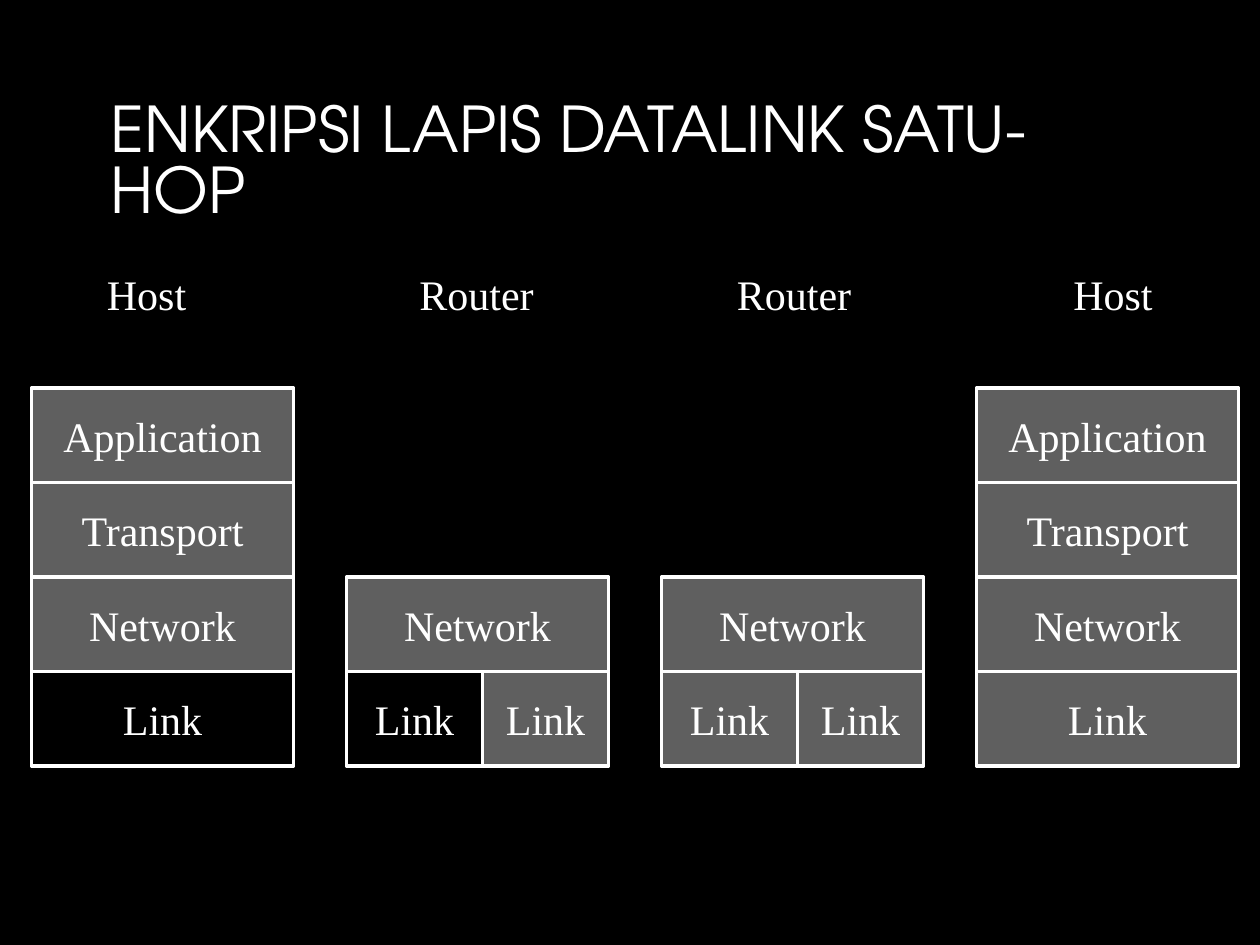
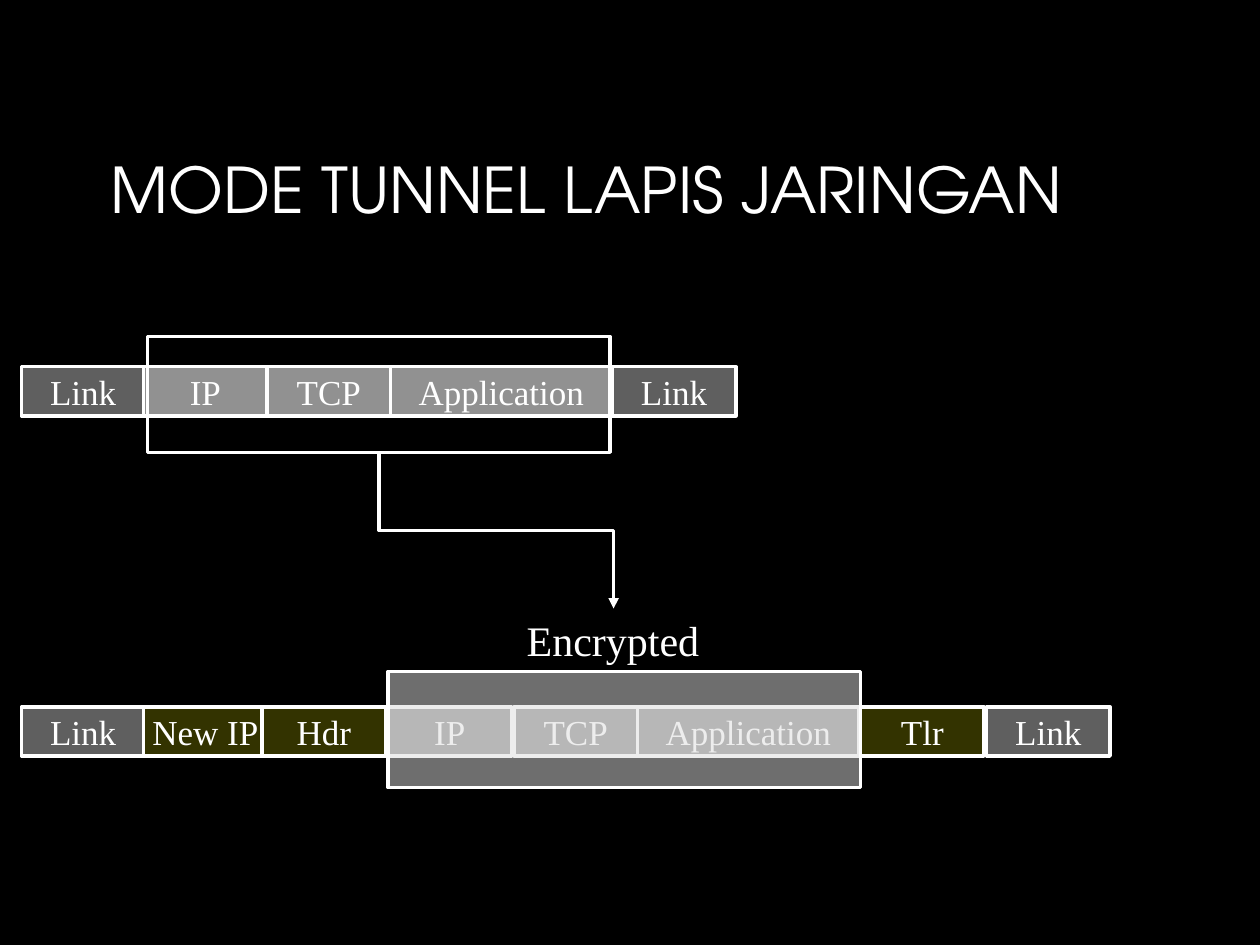
"""Build two slides on link-layer encryption and network-layer tunnel mode."""
from dataclasses import dataclass

from lxml.etree import SubElement
from pptx import Presentation
from pptx.dml.color import RGBColor
from pptx.enum.shapes import MSO_CONNECTOR, MSO_SHAPE
from pptx.enum.text import MSO_ANCHOR, MSO_AUTO_SIZE, PP_ALIGN
from pptx.oxml.ns import qn
from pptx.shapes.autoshape import Shape
from pptx.slide import Slide
from pptx.text.text import TextFrame
from pptx.util import Emu, Pt

EMU_PER_PX = 9144
BLACK = RGBColor(0x00, 0x00, 0x00)
WHITE = RGBColor(0xFF, 0xFF, 0xFF)
GREY = RGBColor(0x5F, 0x5F, 0x5F)
PAYLOAD_GREY = RGBColor(0x91, 0x91, 0x91)
VEIL_GREY = RGBColor(0xDD, 0xDD, 0xDD)
OLIVE = RGBColor(0x33, 0x33, 0x00)
TITLE_FONT = "TeX Gyre Adventor"
BODY_FONT = "Times New Roman"
OUTLINE = Pt(2)

STACK_LEFT, STACK_PITCH, STACK_WIDTH, STACK_BOTTOM = 25, 250, 208, 608
LAYER_HEIGHT = 75
FIRST_LINK_WIDTH = 108
FIELD_HEIGHT = 39


@dataclass(frozen=True)
class Box:
    left: int
    top: int
    width: int
    height: int


@dataclass(frozen=True)
class Node:
    name: str
    name_left: int
    name_width: int
    upper_layers: tuple[str, ...]
    link_fills: tuple[RGBColor, ...]


@dataclass(frozen=True)
class Field:
    label: str
    left: int
    fill: RGBColor
    width: int = 98


HOST_LAYERS = ("Application", "Transport", "Network")
NODES = (
    Node("Host", 75, 83, HOST_LAYERS, (BLACK,)),
    Node("Router", 323, 111, ("Network",), (BLACK, GREY)),
    Node("Router", 575, 111, ("Network",), (GREY, GREY)),
    Node("Host", 842, 83, HOST_LAYERS, (GREY,)),
)
PLAIN_PACKET = (
    Field("Link", 486, GREY),
    Field("Link", 17, GREY),
    Field("IP", 114, PAYLOAD_GREY),
    Field("TCP", 212, PAYLOAD_GREY),
    Field("Application", 310, PAYLOAD_GREY, 176),
)
TUNNEL_PACKET = (
    Field("Link", 783, GREY),
    Field("Link", 17, GREY),
    Field("New IP", 114, OLIVE),
    Field("TCP", 408, PAYLOAD_GREY),
    Field("Application", 506, PAYLOAD_GREY, 176),
    Field("Hdr", 208, OLIVE),
    Field("IP", 308, PAYLOAD_GREY),
    Field("Tlr", 683, OLIVE),
)


def px(length: int) -> Emu:
    """Turn pixels into EMU."""
    return Emu(length * EMU_PER_PX)


def place(box: Box) -> tuple[Emu, Emu, Emu, Emu]:
    """Give a box as the four lengths a shape needs."""
    return px(box.left), px(box.top), px(box.width), px(box.height)


def write(frame: TextFrame, text: str, size: int, align: PP_ALIGN, font_name: str = BODY_FONT) -> None:
    """Fill a text frame with one white paragraph."""
    frame.text = text
    paragraph = frame.paragraphs[0]
    paragraph.alignment = align
    font = paragraph.runs[0].font
    font.name, font.size = font_name, Pt(size)
    font.color.rgb = WHITE


def add_title(slide: Slide, text: str) -> None:
    """Add the slide title, resting on the bottom of its box."""
    frame = slide.shapes.add_textbox(*place(Box(75, 53, 850, 133))).text_frame
    frame.word_wrap = True
    frame.vertical_anchor = MSO_ANCHOR.BOTTOM
    frame.margin_left = frame.margin_right = px(13)
    frame.margin_top = frame.margin_bottom = px(7)
    write(frame, text, 36, PP_ALIGN.LEFT, TITLE_FONT)
    frame.paragraphs[0].line_spacing = 0.8


def add_label(slide: Slide, box: Box, text: str, align: PP_ALIGN = PP_ALIGN.LEFT) -> None:
    """Add free-standing text that does not wrap."""
    frame = slide.shapes.add_textbox(*place(box)).text_frame
    frame.word_wrap = False
    frame.auto_size = MSO_AUTO_SIZE.SHAPE_TO_FIT_TEXT
    write(frame, text, 24, align)


def add_block(slide: Slide, box: Box, fill: RGBColor | None, text: str = "", size: int = 24) -> Shape:
    """Add a white-edged rectangle, filled and labelled if asked."""
    block = slide.shapes.add_shape(MSO_SHAPE.RECTANGLE, *place(box))
    block.shadow.inherit = False
    block.line.color.rgb = WHITE
    block.line.width = OUTLINE
    if fill is None:
        block.fill.background()
    else:
        block.fill.solid()
        block.fill.fore_color.rgb = fill
    if text:
        block.text_frame.word_wrap = False
        block.text_frame.vertical_anchor = MSO_ANCHOR.MIDDLE
        write(block.text_frame, text, size, PP_ALIGN.CENTER)
    return block


def add_node(slide: Slide, node: Node, left: int) -> None:
    """Add a named protocol stack, built up from its link layer."""
    add_label(slide, Box(node.name_left, 208, node.name_width, 50), node.name)
    link_top = STACK_BOTTOM - LAYER_HEIGHT
    shares = len(node.link_fills)
    widths = (STACK_WIDTH,) if shares == 1 else (FIRST_LINK_WIDTH, STACK_WIDTH - FIRST_LINK_WIDTH)
    link_left = left
    for width, fill in zip(widths, node.link_fills):
        add_block(slide, Box(link_left, link_top, width, LAYER_HEIGHT), fill, "Link")
        link_left += width
    for level, layer in enumerate(reversed(node.upper_layers), start=1):
        top = link_top - level * LAYER_HEIGHT
        add_block(slide, Box(left, top, STACK_WIDTH, LAYER_HEIGHT), GREY, layer)


def add_packet(slide: Slide, fields: tuple[Field, ...], top: int) -> None:
    """Add one packet as a row of fields."""
    for field in fields:
        add_block(slide, Box(field.left, top, field.width, FIELD_HEIGHT), field.fill, field.label, 20)


def add_down_elbow(slide: Slide, start: tuple[int, int], end: tuple[int, int]) -> None:
    """Add an arrow that runs down, right and down again."""
    run, drop = end[0] - start[0], end[1] - start[1]
    left = (start[0] + end[0] - drop) // 2
    top = (start[1] + end[1] - run) // 2
    elbow = slide.shapes.add_connector(
        MSO_CONNECTOR.ELBOW, px(left), px(top), px(left + drop), px(top + run))
    elbow.line.color.rgb = WHITE
    elbow.line.width = OUTLINE
    properties = elbow._element.spPr
    turn = properties.find(qn("a:xfrm"))
    turn.set("rot", "16200000")
    turn.set("flipH", "1")
    SubElement(properties.find(qn("a:ln")), qn("a:tailEnd"), type="triangle")
    SubElement(properties, qn("a:effectLst"))


def add_slide(deck: Presentation, title: str) -> Slide:
    """Add a black slide with its title."""
    slide = deck.slides.add_slide(deck.slide_layouts[6])
    slide.background.fill.solid()
    slide.background.fill.fore_color.rgb = BLACK
    add_title(slide, title)
    return slide


def build_link_slide(deck: Presentation) -> None:
    """Show encryption over a single hop of the data link."""
    slide = add_slide(deck, "ENKRIPSI LAPIS DATALINK SATU-HOP")
    for index, node in enumerate(NODES):
        add_node(slide, node, STACK_LEFT + index * STACK_PITCH)


def build_tunnel_slide(deck: Presentation) -> None:
    """Show a packet wrapped and encrypted for a tunnel."""
    slide = add_slide(deck, "MODE TUNNEL LAPIS JARINGAN")
    add_packet(slide, PLAIN_PACKET, 291)
    add_packet(slide, TUNNEL_PACKET, 561)
    veil = add_block(slide, Box(308, 533, 375, 92), VEIL_GREY)
    veil_color = veil._element.spPr.find(qn("a:solidFill"))[0]
    SubElement(veil_color, qn("a:alpha"), val="50000")
    add_label(slide, Box(408, 483, 157, 50), "Encrypted", PP_ALIGN.CENTER)
    add_block(slide, Box(117, 267, 367, 92), None)
    add_down_elbow(slide, (301, 359), (487, 483))


def main() -> None:
    """Build and save the deck."""
    deck = Presentation()
    deck.slide_width, deck.slide_height = px(1000), px(750)
    build_link_slide(deck)
    build_tunnel_slide(deck)
    deck.save("out.pptx")


if __name__ == "__main__":
    main()
